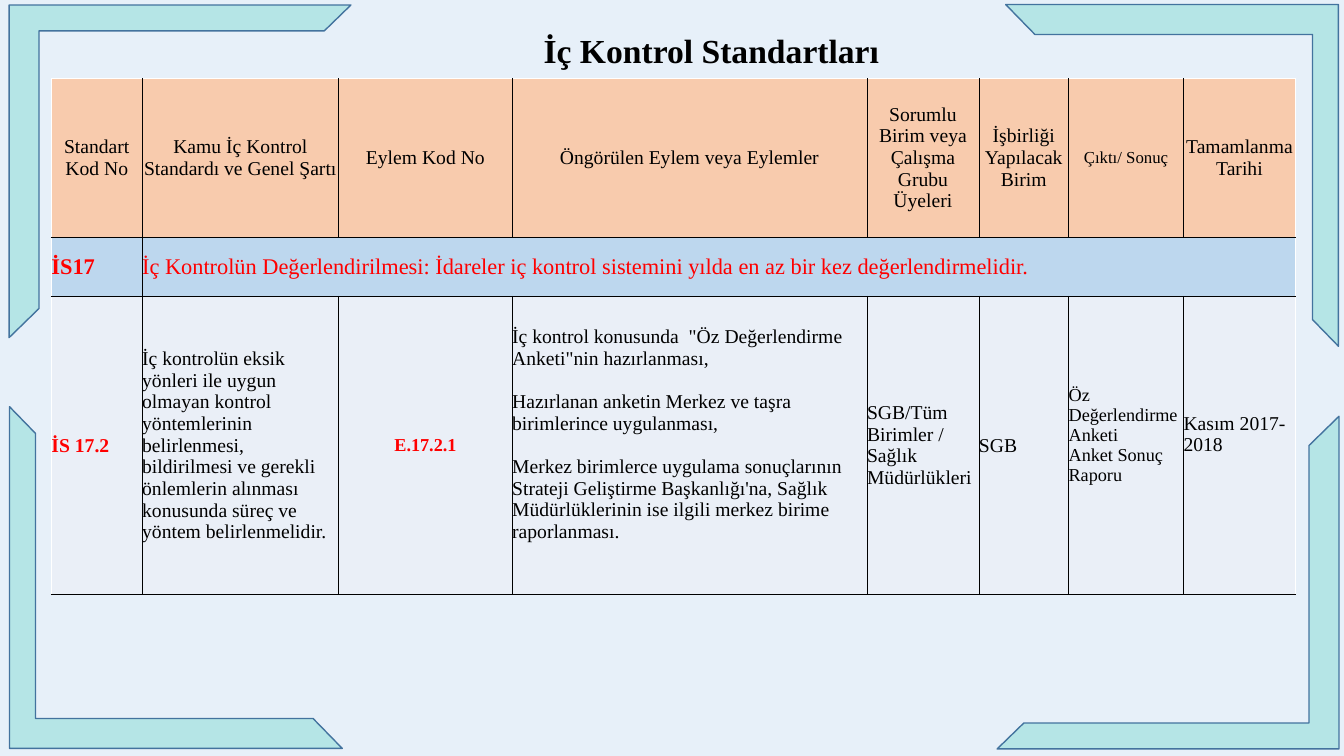
import pptx
import pptx.util
import pptx.dml.color
import pptx.enum.shapes
import pptx.enum.text
import pptx.oxml
import pptx.oxml.ns
from dataclasses import dataclass

ALIGN = pptx.enum.text.PP_ALIGN
MIDDLE = pptx.enum.text.MSO_ANCHOR.MIDDLE


@dataclass(frozen=True)
class Theme:
    face: str = "Times New Roman"
    back: str = "E7F0F9"
    frame: str = "5DD3C5"
    edge: str = "43739E"
    ink: str = "000000"
    red: str = "FF0000"
    white: str = "FFFFFF"
    bands: tuple = ("F8CBAD", "BDD7EE", "EAEFF7")
    title: int = 24
    head: int = 16
    body: int = 14
    small: int = 13
    tiny: int = 12


def color(code):
    return pptx.dml.color.RGBColor.from_string(code)


def node(text):
    return pptx.oxml.parse_xml(text.replace(">", f" {pptx.oxml.ns.nsdecls('a')}>", 1))


class Page:
    """A slide on a grid of tenths of an inch, 133.3 columns by 75 rows."""

    COLS, ROWS = 133.3, 75

    def __init__(self, deck, theme):
        self.theme = theme
        deck.slide_width, deck.slide_height = self.unit(self.COLS), self.unit(self.ROWS)
        self.slide = deck.slides.add_slide(deck.slide_layouts[5])
        fill = self.slide.background.fill
        fill.solid()
        fill.fore_color.rgb = color(theme.back)

    def unit(self, count):
        return pptx.util.Inches(count / 10)

    def label(self, frame, lines, align=ALIGN.LEFT, gap=0, code=None, **style):
        """Fill a text frame with one paragraph per line, gap points apart."""
        look = {"name": self.theme.face, "size": self.theme.body, "bold": False, **style}
        look["size"] = pptx.util.Pt(look["size"])
        frame.word_wrap = True
        frame.text = "\n".join(lines)
        for rank, para in enumerate(frame.paragraphs):
            para.alignment = align
            para.space_before = pptx.util.Pt(gap if rank else 0)
            para.line_spacing = 1.0
            font = para.runs[0].font
            for key, value in look.items():
                setattr(font, key, value)
            font.color.rgb = color(code or self.theme.ink)

    def title(self, text, *box):
        shape = self.slide.shapes.title
        for key, value in zip(("left", "top", "width", "height"), box):
            setattr(shape, key, self.unit(value))
        shape.text_frame.vertical_anchor = MIDDLE
        self.label(shape.text_frame, [text], ALIGN.CENTER, size=self.theme.title, bold=True)

    def corner(self, left, top, turn):
        kind = pptx.enum.shapes.MSO_SHAPE.HALF_FRAME
        shape = self.slide.shapes.add_shape(kind, *map(self.unit, (left, top, 33.9, 33)))
        shape.adjustments[0], shape.adjustments[1] = 0.078, 0.09
        shape.rotation = turn
        shape.shadow.inherit = False
        shape.fill.solid()
        shape.fill.fore_color.rgb = color(self.theme.frame)
        tint = shape.fill._xPr.find(".//" + pptx.oxml.ns.qn("a:srgbClr"))
        tint.append(node('<a:alpha val="36000"></a:alpha>'))
        shape.line.color.rgb = color(self.theme.edge)
        shape.line.width = pptx.util.Pt(1)

    def border(self, cell, sides):
        """Draw sides, a dict of L, R, T, B to whether the side is a white outer edge."""
        props = cell._tc.get_or_add_tcPr()
        for rank, (side, outer) in enumerate(sides.items()):
            width, code = (12700, self.theme.white) if outer else (6350, self.theme.ink)
            props.insert(rank, node(
                f'<a:ln{side} w="{width}"><a:solidFill><a:srgbClr val="{code}"/>'
                f'</a:solidFill></a:ln{side}>'))

    def table(self, left, top, cols, rows, cells):
        """Draw cells, rows of (lines, style) pairs; a short row's last cell spans the rest."""
        size = map(self.unit, (left, top, sum(cols), sum(rows)))
        grid = self.slide.shapes.add_table(len(rows), len(cols), *size).table
        grid.first_row = grid.horz_banding = False
        style = grid._tbl.tblPr.find(pptx.oxml.ns.qn("a:tableStyleId"))
        style.text = "{2D5ABB26-0587-4C30-8999-92F81FD0307C}"
        for col, width in zip(grid.columns, cols):
            col.width = self.unit(width)
        for row, height in zip(grid.rows, rows):
            row.height = self.unit(height)
        for r, line in enumerate(cells):
            for c, (lines, look) in enumerate(line):
                cell = grid.cell(r, c)
                last = c == len(line) - 1
                if last and c < len(cols) - 1:
                    cell.merge(grid.cell(r, len(cols) - 1))
                look = dict(look)
                low = self.unit(look.pop("low", 0))
                inset = {"margin_left": 0, "margin_right": 0, "margin_top": 0,
                         "margin_bottom": low, "vertical_anchor": MIDDLE}
                for key, value in inset.items():
                    setattr(cell, key, value)
                cell.fill.solid()
                cell.fill.fore_color.rgb = color(self.theme.bands[r])
                self.border(cell, {"L": c == 0, "R": last, "T": r == 0, "B": False})
                self.label(cell.text_frame, lines, **look)


def main():
    theme = Theme()
    deck = pptx.Presentation()
    page = Page(deck, theme)
    for left, top, turn in ((0.9, 0.5, 0), (0.5, 40.8, 270), (99.3, 0.9, 90), (98.9, 41.3, 180)):
        page.corner(left, top, turn)

    mid = {"align": ALIGN.CENTER}
    mark = {"code": theme.red, "bold": True}
    heads = ["Standart Kod No", "Kamu İç Kontrol Standardı ve Genel Şartı", "Eylem Kod No",
             "Öngörülen Eylem veya Eylemler", "Sorumlu Birim veya Çalışma Grubu Üyeleri",
             "İşbirliği Yapılacak Birim", "Çıktı/ Sonuç", "Tamamlanma Tarihi"]
    top = [([head], mid) for head in heads]
    top[6] = ([heads[6]], {**mid, "size": theme.tiny})
    band = [
        (["İS17"], {**mark, "size": theme.head}),
        (["İç Kontrolün Değerlendirilmesi: İdareler iç kontrol sistemini yılda en az bir kez "
          "değerlendirmelidir."], {"code": theme.red, "size": theme.head}),
    ]
    body = [
        (["İS 17.2"], mark),
        (["İç kontrolün eksik yönleri ile uygun olmayan kontrol yöntemlerinin belirlenmesi, "
          "bildirilmesi ve gerekli önlemlerin alınması konusunda süreç ve yöntem "
          "belirlenmelidir."], {}),
        (["E.17.2.1"], {**mid, **mark, "size": theme.small}),
        (["İç kontrol konusunda  \"Öz Değerlendirme Anketi\"nin hazırlanması,",
          "Hazırlanan anketin Merkez ve taşra birimlerince uygulanması,",
          "Merkez birimlerce uygulama sonuçlarının Strateji Geliştirme Başkanlığı'na, Sağlık "
          "Müdürlüklerinin ise ilgili merkez birime raporlanması."], {"gap": 15.5, "low": 2.2}),
        (["SGB/Tüm Birimler / Sağlık Müdürlükleri"], {}),
        (["SGB"], {}),
        (["Öz Değerlendirme Anketi", "Anket Sonuç Raporu"], {"size": theme.small, "low": 2}),
        (["Kasım 2017-2018"], {"low": 2.2}),
    ]
    page.table(5.1, 7.8, (9, 19.5, 17.2, 35.2, 11.1, 8.9, 11.4, 11.1), (15.7, 5.9, 29.6),
               (top, band, body))
    page.title("İç Kontrol Standartları", 50.7, 2.5, 39.7, 5)
    deck.save("out.pptx")


if __name__ == "__main__":
    main()
